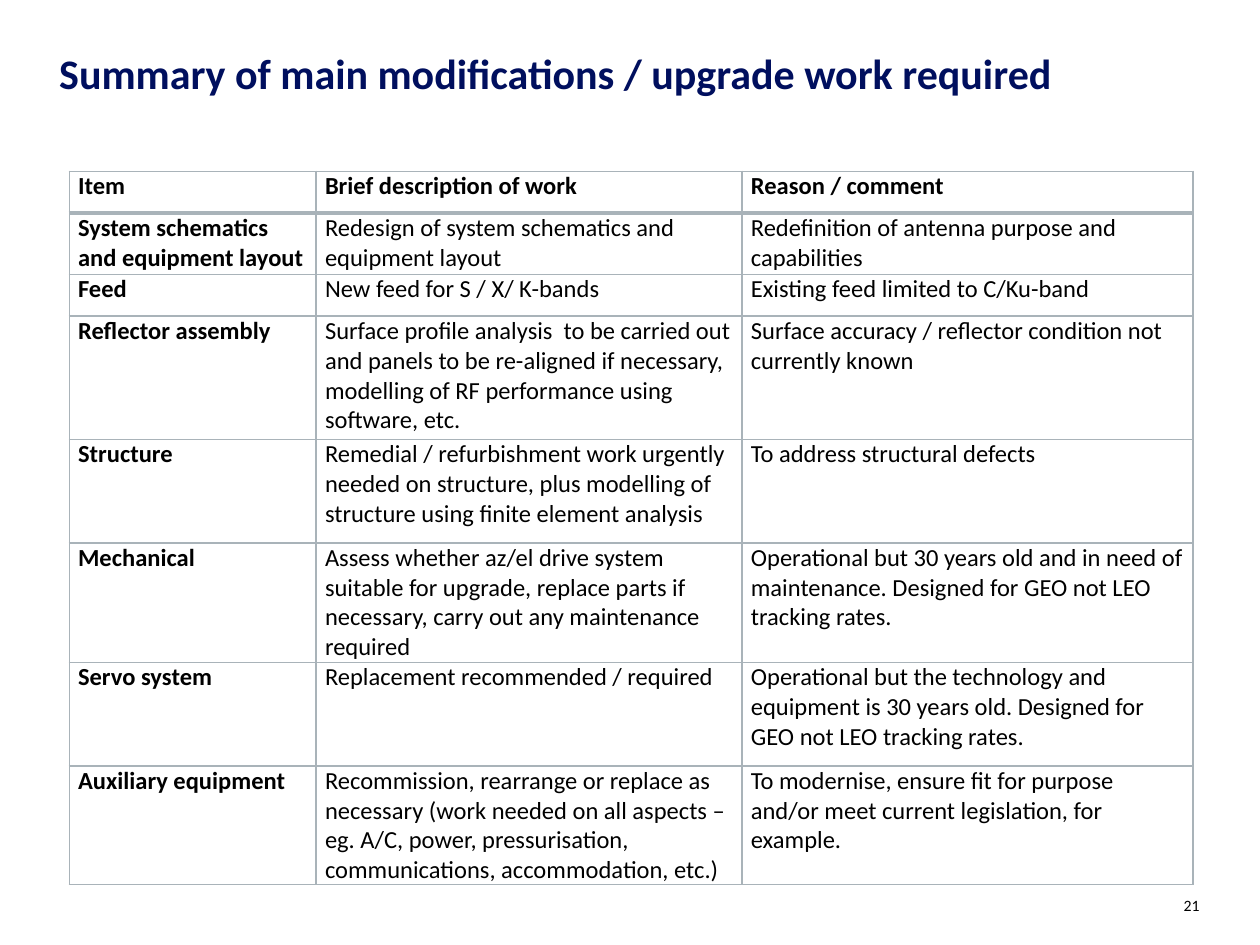
import lxml.etree
import pptx
import pptx.dml.color
import pptx.enum.text
import pptx.oxml.ns
import pptx.util

Inches = pptx.util.Inches
Pt = pptx.util.Pt
NAVY = pptx.dml.color.RGBColor(0x00, 0x0F, 0x5E)
BLACK = pptx.dml.color.RGBColor(0x00, 0x00, 0x00)
GREY = pptx.dml.color.RGBColor(0xA9, 0xB3, 0xB9)

COLUMN_WIDTHS = [1.96, 3.38, 3.58]
ROW_HEIGHTS = [0.33, 0.49, 0.33, 0.98, 0.82, 0.95, 0.82, 0.94]
WORK_ITEMS = [
    ("Item", "Brief description of work", "Reason / comment"),
    ("System schematics and equipment layout",
     "Redesign of system schematics and equipment layout",
     "Redefinition of antenna purpose and capabilities"),
    ("Feed", "New feed for S / X/ K-bands", "Existing feed limited to C/Ku-band"),
    ("Reflector assembly",
     "Surface profile analysis  to be carried out and panels to be re-aligned if necessary, "
     "modelling of RF performance using software, etc.",
     "Surface accuracy / reflector condition not currently known"),
    ("Structure",
     "Remedial / refurbishment work urgently needed on structure, plus modelling of structure "
     "using finite element analysis",
     "To address structural defects"),
    ("Mechanical",
     "Assess whether az/el drive system suitable for upgrade, replace parts if necessary, "
     "carry out any maintenance required",
     "Operational but 30 years old and in need of maintenance. Designed for GEO not LEO "
     "tracking rates."),
    ("Servo system", "Replacement recommended / required",
     "Operational but the technology and equipment is 30 years old. Designed for GEO not LEO "
     "tracking rates."),
    ("Auxiliary equipment",
     "Recommission, rearrange or replace as necessary (work needed on all aspects – eg. A/C, "
     "power, pressurisation, communications, accommodation, etc.)",
     "To modernise, ensure fit for purpose and/or meet current legislation, for example."),
]


class SlideBuilder:
    """Holds the text style and the current slide, and adds elements to it."""

    def __init__(self, slide, font_name="Calibri"):
        self.slide = slide
        self.font_name = font_name

    def run(self, paragraph, text, size, color=BLACK, bold=False):
        run = paragraph.add_run()
        run.text = text
        run.font.name = self.font_name
        run.font.size = Pt(size)
        run.font.bold = bold
        run.font.color.rgb = color

    def text(self, bounds, text, size, line_spacing, align="LEFT", **style):
        frame = self.slide.shapes.add_textbox(*map(Inches, bounds)).text_frame
        frame.word_wrap = True
        frame.margin_left = frame.margin_right = frame.margin_top = frame.margin_bottom = 0
        paragraph = frame.paragraphs[0]
        paragraph.alignment = getattr(pptx.enum.text.PP_ALIGN, align)
        paragraph.line_spacing = Pt(line_spacing)
        self.run(paragraph, text, size, **style)

    def borders(self, cell, top, bottom):
        properties = cell._tc.get_or_add_tcPr()
        qn = pptx.oxml.ns.qn
        widths = {"a:lnL": 1, "a:lnR": 1, "a:lnT": top, "a:lnB": bottom}
        for index, (side, width) in enumerate(widths.items()):
            line = lxml.etree.Element(qn(side), w=str(Pt(width)))
            fill = lxml.etree.SubElement(line, qn("a:solidFill"))
            lxml.etree.SubElement(fill, qn("a:srgbClr"), val=str(GREY))
            properties.insert(index, line)

    def table(self, left, top, widths, heights, rows, size):
        table = self.slide.shapes.add_table(
            len(rows), len(widths), Inches(left), Inches(top),
            Inches(sum(widths)), Inches(sum(heights))).table
        table.first_row = table.horz_banding = False
        for column, width in zip(table.columns, widths):
            column.width = Inches(width)
        for r, (height, row) in enumerate(zip(heights, rows)):
            table.rows[r].height = Inches(height)
            for c, text in enumerate(row):
                cell = table.cell(r, c)
                cell.margin_left = cell.margin_right = Inches(0.07)
                cell.margin_top = cell.margin_bottom = 0
                cell.fill.background()
                self.borders(cell, 3 if r == 1 else 1, 3 if r == 0 else 1)
                self.run(cell.text_frame.paragraphs[0], text, size, bold=r == 0 or c == 0)


def main():
    deck = pptx.Presentation()
    deck.slide_width, deck.slide_height = Inches(10), Inches(7.5)
    builder = SlideBuilder(deck.slides.add_slide(deck.slide_layouts[6]))
    builder.text((0.47, 0.42, 9.02, 0.84),
                 "Summary of main modifications / upgrade work required",
                 24, 26, color=NAVY, bold=True)
    builder.table(0.55, 1.36, COLUMN_WIDTHS, ROW_HEIGHTS, WORK_ITEMS, 14)
    builder.text((8.93, 7.11, 0.59, 0.24), "21", 9, 11, align="RIGHT")
    deck.save("out.pptx")


if __name__ == "__main__":
    main()
